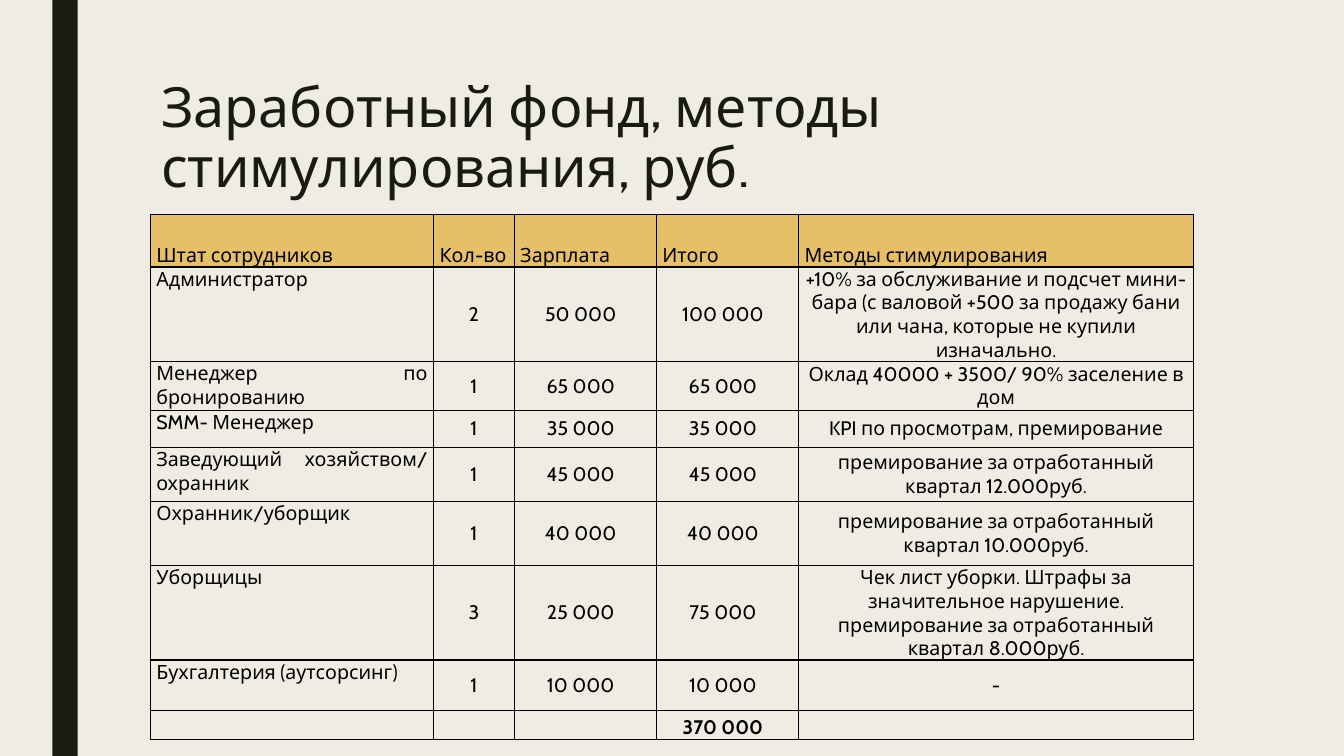
import dataclasses

import lxml.etree
import pptx
import pptx.dml.color
import pptx.enum.shapes
import pptx.enum.text
import pptx.oxml.ns
import pptx.util

Inches = pptx.util.Inches
Align = pptx.enum.text.PP_ALIGN
Anchor = pptx.enum.text.MSO_ANCHOR


@dataclasses.dataclass(frozen=True)
class Theme:
    font: str = "Cabin"
    background: str = "EFEDE3"
    dark: str = "191B0E"
    header: str = "E6C069"
    ink: str = "000000"
    title_size: float = 39.6
    table_size: float = 14
    border_width: float = 1


TITLE = "Заработный фонд, методы стимулирования, руб."
HEADER = ("Штат сотрудников", "Кол-во", "Зарплата", "Итого", "Методы стимулирования")
STAFF = [
    ("Администратор", "2", "50 000", "100 000",
     "+10% за обслуживание и подсчет мини-бара (с валовой +500 за продажу бани "
     "или чана, которые не купили изначально."),
    ("Менеджер по бронированию", "1", "65 000", "65 000",
     "Оклад 40000 + 3500/ 90% заселение в дом"),
    ("SMM- Менеджер", "1", "35 000", "35 000", "KPI по просмотрам, премирование"),
    ("Заведующий хозяйством/ охранник", "1", "45 000", "45 000",
     "премирование за отработанный квартал 12.000руб."),
    ("Охранник/уборщик", "1", "40 000", "40 000",
     "премирование за отработанный квартал 10.000руб."),
    ("Уборщицы", "3", "25 000", "75 000",
     "Чек лист уборки. Штрафы за значительное нарушение. "
     "премирование за отработанный квартал 8.000руб."),
    ("Бухгалтерия (аутсорсинг)", "1", "10 000", "10 000", "-"),
]
TOTAL = ("", "", "", "370 000", "")
COLUMN_WIDTHS = (2.81, 0.8, 1.41, 1.41, 3.92)
ROW_HEIGHTS = (0.52, 0.94, 0.48, 0.37, 0.54, 0.63, 0.94, 0.5, 0.29)
MONEY_COLUMNS = (2, 3)


class SlideBuilder:
    def __init__(self, slide, theme):
        self.slide = slide
        self.theme = theme

    def color(self, value):
        return pptx.dml.color.RGBColor.from_string(value)

    def style(self, paragraph, size, color, bold=False):
        font = paragraph.font
        font.name, font.size, font.bold = self.theme.font, pptx.util.Pt(size), bold
        font.color.rgb = self.color(color)

    def background(self):
        fill = self.slide.background.fill
        fill.solid()
        fill.fore_color.rgb = self.color(self.theme.background)

    def bar(self, left, top, width, height):
        shape = self.slide.shapes.add_shape(
            pptx.enum.shapes.MSO_SHAPE.RECTANGLE,
            Inches(left), Inches(top), Inches(width), Inches(height))
        shape.shadow.inherit = False
        shape.fill.solid()
        shape.fill.fore_color.rgb = self.color(self.theme.dark)
        shape.line.fill.background()

    def title(self, text, left, top, width, height):
        box = self.slide.shapes.add_textbox(
            Inches(left), Inches(top), Inches(width), Inches(height))
        box.text_frame.word_wrap = True
        paragraph = box.text_frame.paragraphs[0]
        paragraph.text = text
        paragraph.line_spacing = 0.89
        self.style(paragraph, self.theme.title_size, self.theme.dark)

    def borders(self, cell):
        properties = cell._tc.get_or_add_tcPr()
        for index, side in enumerate(("a:lnL", "a:lnR", "a:lnT", "a:lnB")):
            line = lxml.etree.Element(
                pptx.oxml.ns.qn(side), w=str(pptx.util.Pt(self.theme.border_width)))
            fill = lxml.etree.SubElement(line, pptx.oxml.ns.qn("a:solidFill"))
            lxml.etree.SubElement(fill, pptx.oxml.ns.qn("a:srgbClr"), val=self.theme.ink)
            properties.insert(index, line)

    def cell(self, cell, text, align, anchor, right_margin, fill=None, bold=False):
        cell.margin_left, cell.margin_right = Inches(0.06), Inches(right_margin)
        cell.margin_top = cell.margin_bottom = 0
        cell.vertical_anchor = anchor
        if fill:
            cell.fill.solid()
            cell.fill.fore_color.rgb = self.color(fill)
        else:
            cell.fill.background()
        paragraph = cell.text_frame.paragraphs[0]
        paragraph.alignment = align
        self.style(paragraph, self.theme.table_size, self.theme.ink, bold)
        if text:
            paragraph.text = text
        else:
            # An empty cell takes its line height from the end mark
            lxml.etree.SubElement(
                paragraph._p, pptx.oxml.ns.qn("a:endParaRPr"),
                sz=str(int(self.theme.table_size * 100)))
        self.borders(cell)

    def table(self, rows, left, top):
        table = self.slide.shapes.add_table(
            len(rows), len(COLUMN_WIDTHS), Inches(left), Inches(top),
            Inches(sum(COLUMN_WIDTHS)), Inches(sum(ROW_HEIGHTS))).table
        table.first_row = table.horz_banding = False
        for column, width in zip(table.columns, COLUMN_WIDTHS):
            column.width = Inches(width)
        for row, height in zip(table.rows, ROW_HEIGHTS):
            row.height = Inches(height)
        last = len(rows) - 1
        for row_index, row in enumerate(rows):
            for column_index, text in enumerate(row):
                align, anchor, right_margin = Align.CENTER, Anchor.MIDDLE, 0.06
                if row_index == 0:
                    align, anchor = Align.JUSTIFY, Anchor.BOTTOM
                elif column_index == 0:
                    align, anchor = Align.JUSTIFY, Anchor.TOP
                elif column_index in MONEY_COLUMNS:
                    right_margin = 0.15
                if row_index == last:
                    anchor = Anchor.BOTTOM
                self.cell(table.cell(row_index, column_index), text, align, anchor,
                          right_margin, self.theme.header if row_index == 0 else None,
                          bold=row_index == last)


def main():
    deck = pptx.Presentation()
    deck.slide_width, deck.slide_height = Inches(13.33), Inches(7.5)
    page = SlideBuilder(deck.slides.add_slide(deck.slide_layouts[6]), Theme())

    # Backdrop and side bar
    page.background()
    page.bar(0.52, 0, 0.25, 7.5)

    # Title and payroll table
    page.title(TITLE, 1.5, 0.75, 10.5, 1.62)
    page.table([HEADER, *STAFF, TOTAL], 1.49, 2.13)

    deck.save("out.pptx")


if __name__ == "__main__":
    main()
